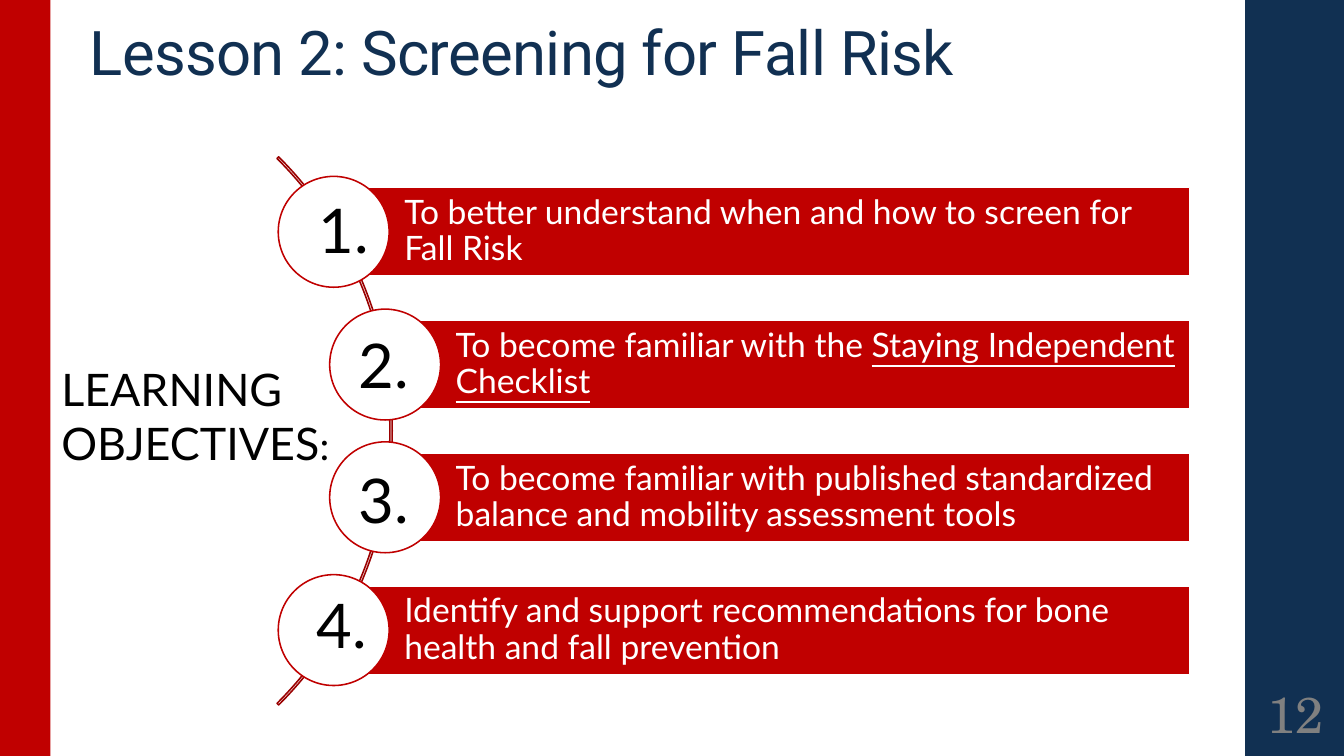
import pptx
import pptx.util
import pptx.dml.color
import pptx.enum.shapes
import pptx.enum.text

SHAPES = pptx.enum.shapes.MSO_SHAPE
ANCHOR = pptx.enum.text.MSO_ANCHOR
ALIGN = pptx.enum.text.PP_ALIGN
WIDTH, HEIGHT = 13.33, 7.5
NAVY, RED, DARK_RED = "113052", "C00000", "9A0000"
WHITE, BLACK, GRAY = "FFFFFF", "000000", "808080"

TITLE = "Lesson 2: Screening for Fall Risk"
PAGE_NUMBER = "12"
HEADING = [("LEARNING", 32), (" ", 24), ("OBJECTIVES", 32), (":", 28)]
# number, its centre, plain wording, underlined wording
OBJECTIVES = [
    ("1.", (3.41, 2.28), "To better understand when and how to screen for Fall Risk", ""),
    ("2.", (3.81, 3.61), "To become familiar with the ", "Staying Independent Checklist"),
    ("3.", (3.81, 4.95), "To become familiar with published standardized "
     "balance and mobility assessment tools", ""),
    ("4.", (3.39, 6.19), "Identify and support recommendations for bone "
     "health and fall prevention", ""),
]

BAR_LEFTS = (3.31, 3.82, 3.82, 3.31)
BAR_RIGHT, BAR_HEIGHT = 11.8, 0.88
FIRST_CENTRE, ROW_PITCH = 2.3, 1.317
CIRCLE = 1.1
ARC_SIZE = 7.69
NUMBER_WIDTH, NUMBER_HEIGHT = 0.74, 0.84
SIDE_LEFT, SIDE_WIDTH = 12.35, 1

deck = pptx.Presentation()
deck.slide_width = pptx.util.Inches(WIDTH)
deck.slide_height = pptx.util.Inches(HEIGHT)
slide = deck.slides.add_slide(deck.slide_layouts[6])


def rgb(color):
    return pptx.dml.color.RGBColor.from_string(color)


def inches(*lengths):
    return [pptx.util.Inches(length) for length in lengths]


def add_block(kind, box, fill=None, line=None):
    block = slide.shapes.add_shape(kind, *inches(*box))
    block.shadow.inherit = False
    if fill:
        block.fill.solid()
        block.fill.fore_color.rgb = rgb(fill)
    else:
        block.fill.background()
    if line:
        block.line.color.rgb = rgb(line)
        block.line.width = pptx.util.Pt(1.1)
    else:
        block.line.fill.background()
    return block


def write(shape, texts, font, size, color, align=ALIGN.LEFT, anchor=ANCHOR.TOP,
          insets=(0.1, 0.05, 0.1, 0.05), wrap=True):
    """Fill a shape with one paragraph and return the paragraph."""
    frame = shape.text_frame
    frame.word_wrap = wrap
    frame.vertical_anchor = anchor
    (frame.margin_left, frame.margin_top,
     frame.margin_right, frame.margin_bottom) = inches(*insets)
    paragraph = frame.paragraphs[0]
    paragraph.alignment = align
    paragraph.font.name = font
    paragraph.font.size = pptx.util.Pt(size)
    paragraph.font.color.rgb = rgb(color)
    for text in texts:
        paragraph.add_run().text = text
    return paragraph


def add_text(box, texts, *style, **layout):
    return write(slide.shapes.add_textbox(*inches(*box)), texts, *style, **layout)


add_block(SHAPES.RECTANGLE, (SIDE_LEFT, 0, SIDE_WIDTH, HEIGHT), NAVY)
add_block(SHAPES.RECTANGLE, (0, 0, 0.5, HEIGHT), RED)

title = add_text((0.42, -0.08, 12.17, 1), [TITLE], "Roboto", 44, NAVY,
                 anchor=ANCHOR.BOTTOM, insets=(0.47, 0.05, 0.1, 0.05))
title.runs[0].font._element.set("spc", "-50")
add_text((SIDE_LEFT, 6.75, SIDE_WIDTH, 0.65), [PAGE_NUMBER], "TeX Gyre Schola", 36, GRAY,
         align=ALIGN.CENTER, anchor=ANCHOR.MIDDLE, insets=(0.05,) * 4)

arc = add_block(SHAPES.BLOCK_ARC, (-3.8, 0.43, ARC_SIZE, ARC_SIZE), line=DARK_RED)
for index, value in enumerate((189, 27, 0.003)):
    arc.adjustments[index] = value

for row, (left, objective) in enumerate(zip(BAR_LEFTS, OBJECTIVES)):
    plain, underlined = objective[2:]
    centre = FIRST_CENTRE + row * ROW_PITCH
    bar = add_block(SHAPES.RECTANGLE, (left, centre - BAR_HEIGHT / 2,
                                       BAR_RIGHT - left, BAR_HEIGHT), RED, WHITE)
    wording = write(bar, [plain], "Lato", 24, WHITE, anchor=ANCHOR.MIDDLE,
                    insets=(0.7, 0.07, 0.07, 0.07))
    wording.line_spacing = 0.9
    if underlined:
        link = wording.add_run()
        link.text = underlined
        link.font.underline = True
    add_block(SHAPES.OVAL, (left - CIRCLE / 2, centre - CIRCLE / 2, CIRCLE, CIRCLE),
              WHITE, RED)

for number, (x, y), *_ in OBJECTIVES:
    add_text((x - NUMBER_WIDTH / 2, y - NUMBER_HEIGHT / 2, NUMBER_WIDTH, NUMBER_HEIGHT),
             [number], "Lato", 44, BLACK, align=ALIGN.CENTER, wrap=False)

heading = add_text((0.51, 3.54, 3.47, 1.18), [text for text, _ in HEADING],
                   "Lato", 32, BLACK)
for run, (_, size) in zip(heading.runs, HEADING):
    run.font.size = pptx.util.Pt(size)

deck.save("out.pptx")
